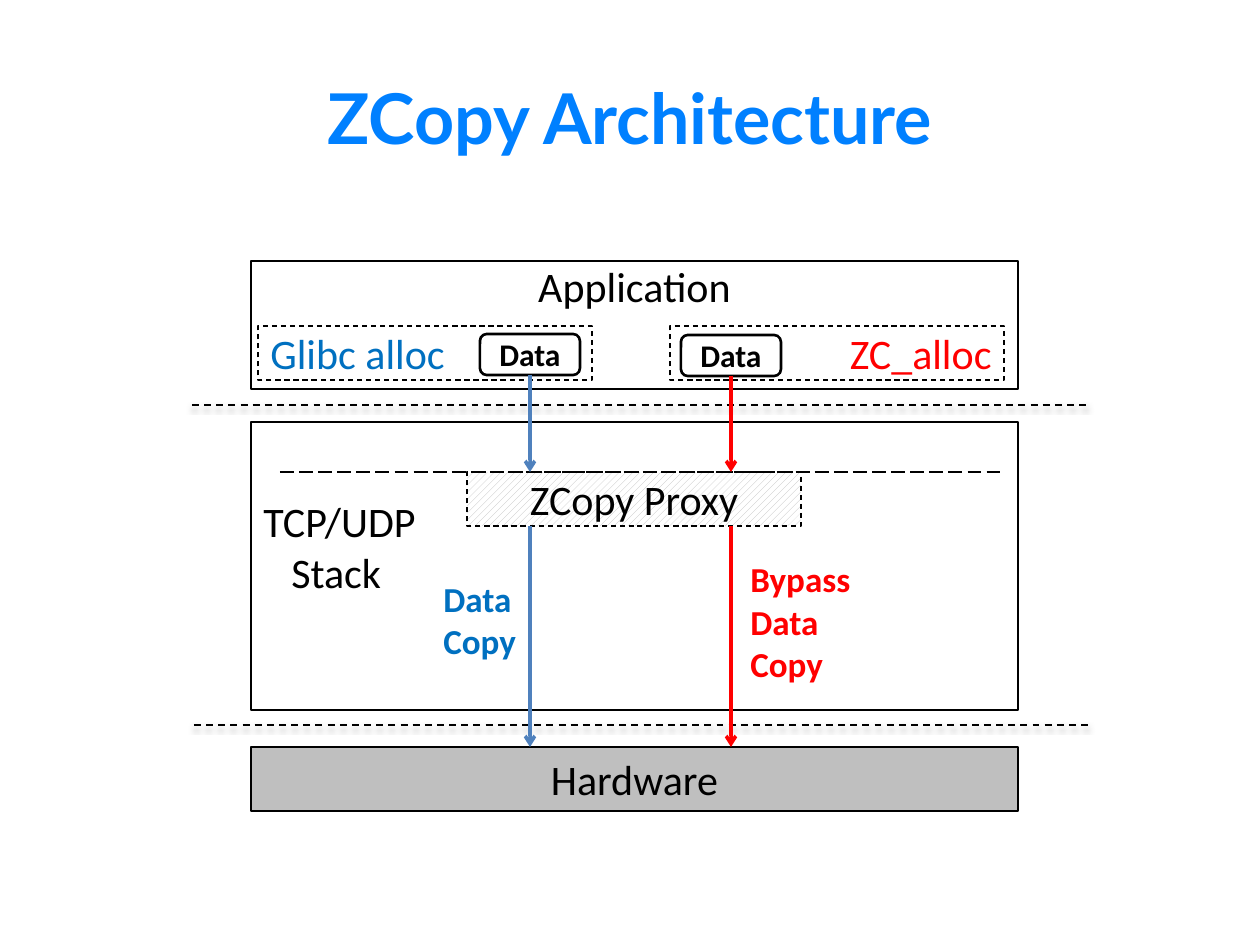
from lxml import etree
from pptx import Presentation
from pptx.dml.color import RGBColor
from pptx.enum.dml import MSO_LINE, MSO_PATTERN
from pptx.enum.shapes import MSO_CONNECTOR, MSO_SHAPE
from pptx.enum.text import MSO_ANCHOR, PP_ALIGN
from pptx.oxml import parse_xml
from pptx.oxml.ns import nsdecls, qn
from pptx.util import Emu, Pt

PX = 914400 / 126
BOTTOM = 2
RECT, ROUNDED = MSO_SHAPE.RECTANGLE, MSO_SHAPE.ROUNDED_RECTANGLE
LEFT, CENTER, RIGHT = PP_ALIGN.LEFT, PP_ALIGN.CENTER, PP_ALIGN.RIGHT
TOP, MIDDLE = MSO_ANCHOR.TOP, MSO_ANCHOR.MIDDLE
DASH, LONG_DASH = MSO_LINE.DASH, MSO_LINE.LONG_DASH

BLACK = RGBColor(0x00, 0x00, 0x00)
WHITE = RGBColor(0xFF, 0xFF, 0xFF)
GRAY = RGBColor(0xBF, 0xBF, 0xBF)
TITLE_BLUE = RGBColor(0x00, 0x80, 0xFF)
COPY_BLUE = RGBColor(0x00, 0x70, 0xC0)
ARROW_BLUE = RGBColor(0x4F, 0x81, 0xBD)
RED = RGBColor(0xFF, 0x00, 0x00)

LAYER_X, LAYER_W = 251, 767
SLOT_W, SLOT_H = 334, 54
CHIP_W, CHIP_H = 100, 41
PROXY_Y, HARDWARE_Y = 472, 747
STACK_INDENT = 28

# lines of text, (left, top, width, height), text format
TITLE = (["ZCopy Architecture"], (63, 38, 1134, 158),
         dict(size=40, font="Lato", color=TITLE_BLUE, bold=True, align=CENTER, anchor=MIDDLE))
NOTES = [
    (["Data", "Copy"], (431, 571, 98, 97), dict(size=20, color=COPY_BLUE, bold=True, wrap=False)),
    (["Bypass", "Data", "Copy"], (738, 552, 126, 140), dict(size=20, color=RED, bold=True, wrap=False)),
]

# lines of text, (left, top, width, height), outline dash, text format
BOXES = [
    (["Application"], (LAYER_X, 261, LAYER_W, 128), None, dict(align=CENTER, inset_top=0)),
    (["Glibc alloc"], (258, 326, SLOT_W, SLOT_H), DASH, dict(color=COPY_BLUE, anchor=MIDDLE)),
    (["ZC_alloc"], (670, 326, SLOT_W, SLOT_H), DASH, dict(color=RED, align=RIGHT, anchor=MIDDLE)),
    (["TCP/UDP", "Stack"], (LAYER_X, 422, LAYER_W, 288), None, dict(inset_top=74)),
    (["ZCopy Proxy"], (467, PROXY_Y, SLOT_W, SLOT_H), DASH, dict(align=CENTER, anchor=MIDDLE)),
    (["Hardware"], (LAYER_X, HARDWARE_Y, LAYER_W, 64), None, dict(align=CENTER, anchor=MIDDLE)),
]

# chip left, chip top, arrow colour
DATA_PATHS = [(480, 334, ARROW_BLUE), (681, 335, RED)]

# left, right, y
SEPARATORS = [(192, 1090, 405), (194, 1091, 725)]
STACK_TOP_LINE = (280, 1005, PROXY_Y)

SHADOW = (f'<a:effectLst {nsdecls("a")}>'
          '<a:outerShdw blurRad="40000" dist="20000" dir="5400000" rotWithShape="0">'
          '<a:srgbClr val="000000"><a:alpha val="38000"/></a:srgbClr>'
          '</a:outerShdw></a:effectLst>')
NO_SHADOW = f'<a:effectLst {nsdecls("a")}/>'


def emu(*lengths):
    return [Emu(round(length * PX)) for length in lengths]


def write(shape, lines, size=24, font="Calibri", color=BLACK, bold=False,
          align=LEFT, anchor=TOP, inset_top=6, wrap=True):
    frame = shape.text_frame
    frame.word_wrap = wrap
    frame.vertical_anchor = anchor
    frame.margin_top = emu(inset_top)[0]
    frame.text = "\n".join(lines)
    for paragraph in frame.paragraphs:
        paragraph.alignment = align
        values = {"size": Pt(size), "name": font, "bold": bold}
        for name, value in values.items():
            setattr(paragraph.runs[0].font, name, value)
        paragraph.runs[0].font.color.rgb = color


def add_text(shapes, lines, place, text_format):
    write(shapes.add_textbox(*emu(*place)), lines, **text_format)


def add_box(shapes, lines, place, dash=None, text_format=None, kind=RECT, width=0.75):
    box = shapes.add_shape(kind, *emu(*place))
    box.shadow.inherit = False
    box.fill.background()
    box.line.color.rgb = BLACK
    box.line.width = Pt(width)
    if dash:
        box.line.dash_style = dash
    write(box, lines, **(text_format or {}))
    return box


def add_line(shapes, start, end, color=BLACK, width=1, dash=None, effect=NO_SHADOW):
    line = shapes.add_connector(MSO_CONNECTOR.STRAIGHT, *emu(*start, *end))
    line.line.color.rgb = color
    line.line.width = Pt(width)
    if dash:
        line.line.dash_style = dash
    line._element.spPr.append(parse_xml(effect))
    return line


def add_arrow(shapes, x, top, bottom, color):
    arrow = add_line(shapes, (x, top), (x, bottom), color, width=2)
    etree.SubElement(arrow.line._get_or_add_ln(), qn("a:tailEnd"), type="arrow")
    return arrow


def main():
    presentation = Presentation()
    presentation.slide_width, presentation.slide_height = emu(1260, 945)
    shapes = presentation.slides.add_slide(presentation.slide_layouts[6]).shapes

    add_text(shapes, *TITLE)
    for left, right, y in SEPARATORS:
        add_line(shapes, (left, y), (right, y), dash=DASH, effect=SHADOW)

    boxes = {lines[0]: add_box(shapes, lines, *rest) for lines, *rest in BOXES}
    stack_word = boxes["TCP/UDP"].text_frame.paragraphs[1]
    stack_word._p.get_or_add_pPr().set("marL", str(emu(STACK_INDENT)[0]))
    proxy_fill = boxes["ZCopy Proxy"].fill
    proxy_fill.patterned()
    proxy_fill.pattern = MSO_PATTERN.WIDE_UPWARD_DIAGONAL
    proxy_fill.fore_color.rgb = GRAY
    proxy_fill.back_color.rgb = WHITE
    boxes["Hardware"].fill.solid()
    boxes["Hardware"].fill.fore_color.rgb = GRAY

    left, right, y = STACK_TOP_LINE
    add_line(shapes, (left, y), (right, y), dash=LONG_DASH)

    chip_format = dict(size=18, bold=True, align=CENTER, anchor=MIDDLE)
    for left, top, color in DATA_PATHS:
        chip = add_box(shapes, ["Data"], (left, top, CHIP_W, CHIP_H),
                       text_format=chip_format, kind=ROUNDED, width=1.5)
        x = left + CHIP_W / 2
        to_proxy = add_arrow(shapes, x, top + CHIP_H, PROXY_Y, color)
        to_proxy.begin_connect(chip, BOTTOM)
        add_arrow(shapes, x, PROXY_Y + SLOT_H, HARDWARE_Y, color)

    for note in NOTES:
        add_text(shapes, *note)
    presentation.save("out.pptx")


if __name__ == "__main__":
    main()
